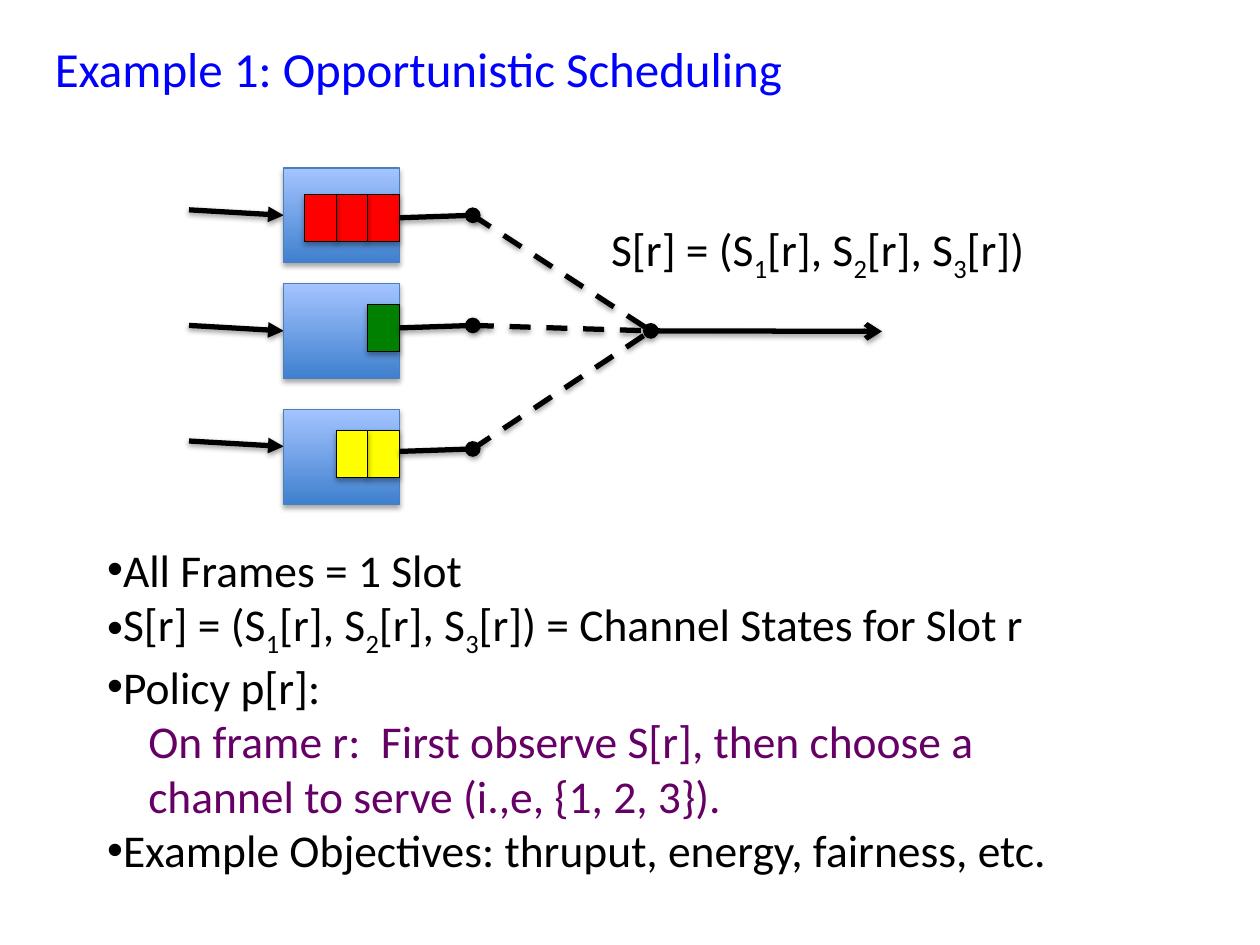
from dataclasses import dataclass

from lxml import etree
from pptx import Presentation
from pptx import util as u
from pptx.dml.color import RGBColor
from pptx.enum import dml, shapes, text
from pptx.oxml import ns

BLACK = RGBColor(0x00, 0x00, 0x00)
BLUE = RGBColor(0x00, 0x00, 0xFF)
PURPLE = RGBColor(0x66, 0x00, 0x66)
RED = RGBColor(0xFF, 0x00, 0x00)
GREEN = RGBColor(0x00, 0x80, 0x00)
YELLOW = RGBColor(0xFF, 0xFF, 0x00)
QUEUE_BOTTOM = RGBColor(0x3F, 0x80, 0xCE)
QUEUE_TOP = RGBColor(0xA4, 0xC4, 0xFF)
QUEUE_LINE = RGBColor(0x4B, 0x7E, 0xBC)

# Lengths in centimetres
ARRIVAL_X, QUEUE_X, SWITCH_X = 3.81, 5.72, 9.53
QUEUE_WIDTH, QUEUE_HEIGHT = 2.33, 1.91
QUEUE_RIGHT = QUEUE_X + QUEUE_WIDTH
PACKET_WIDTH, PACKET_HEIGHT = 0.635, 0.95
HUB = (13.12, 6.67)
SERVER_END = (17.78, 6.68)


@dataclass
class Queue:
    top: float
    arrival_y: float
    packet_top: float
    switch_y: float
    packets: int
    color: RGBColor


QUEUES = [
    Queue(3.39, 4.23, 3.92, 4.34, 3, RED),
    Queue(5.72, 6.56, 6.14, 6.56, 1, GREEN),
    Queue(8.26, 8.89, 8.68, 9.05, 2, YELLOW),
]


@dataclass
class Line:
    content: str
    bullet: bool = True
    color: RGBColor = BLACK


STATES = "S[r] = (S_1[r], S_2[r], S_3[r])"
LINES = [
    Line("All Frames = 1 Slot"),
    Line(STATES + " = Channel States for Slot r"),
    Line("Policy p[r]:"),
    Line("On frame r:  First observe S[r], then choose a", False, PURPLE),
    Line("channel to serve (i.,e, {1, 2, 3}).", False, PURPLE),
    Line("Example Objectives: thruput, energy, fairness, etc."),
]


def add_child(parent, tag: str, **attributes):
    return etree.SubElement(parent, ns.qn(tag), attributes)


def add_shadow(shape, distance: float, opacity: int) -> None:
    """Append a soft shadow below; call after fill and line are set."""
    effects = add_child(shape._element.spPr, "a:effectLst")
    shadow = add_child(effects, "a:outerShdw", blurRad=str(u.Pt(3.1)),
                       dist=str(u.Pt(distance)), dir="5400000", rotWithShape="0")
    color = add_child(shadow, "a:srgbClr", val=str(BLACK))
    add_child(color, "a:alpha", val=str(opacity * 1000))


def add_box(slide, left: float, top: float, width: float, height: float,
            line_color: RGBColor, fill_color: RGBColor | None = None) -> None:
    """Draw a rectangle; without a fill colour it gets the queue gradient."""
    shape = slide.shapes.add_shape(shapes.MSO_SHAPE.RECTANGLE, u.Cm(left),
                                   u.Cm(top), u.Cm(width), u.Cm(height))
    if fill_color is None:
        shape.fill.gradient()
        shape.fill.gradient_angle = 90
        for stop, color, position in zip(shape.fill.gradient_stops,
                                         (QUEUE_BOTTOM, QUEUE_TOP), (0, 1)):
            stop.color.rgb = color
            stop.position = position
    else:
        shape.fill.solid()
        shape.fill.fore_color.rgb = fill_color
    shape.line.color.rgb = line_color
    shape.line.width = u.Pt(0.75)
    add_shadow(shape, 1.8, 35)


def add_line(slide, start: tuple[float, float], end: tuple[float, float],
             head: str = "", tail: str = "", dashed: bool = False) -> None:
    connector = slide.shapes.add_connector(
        shapes.MSO_CONNECTOR.STRAIGHT, *(u.Cm(value) for value in start + end))
    connector.line.color.rgb = BLACK
    connector.line.width = u.Pt(3)
    if dashed:
        connector.line.dash_style = dml.MSO_LINE.DASH
    outline = connector.line._get_or_add_ln()
    if head:
        add_child(outline, "a:headEnd", type=head)
    if tail:
        add_child(outline, "a:tailEnd", type=tail)
    add_shadow(connector, 1.6, 38)


def write(paragraph, content: str, *, size: float = 26, color: RGBColor = BLACK,
          bullet: bool = False, indent: float = 0) -> None:
    """Fill a paragraph; the character after each underscore is a subscript."""
    paragraph.alignment = text.PP_ALIGN.LEFT
    properties = paragraph._p.get_or_add_pPr()
    properties.set("marL", str(u.Cm(indent)))
    properties.set("indent", "0")
    if bullet:
        add_child(properties, "a:buFont", typeface="Arial")
        add_child(properties, "a:buChar", char="•")
    first, *rest = content.split("_")
    pieces = [(first, False)]
    for part in rest:
        pieces += [(part[:1], True), (part[1:], False)]
    for piece, subscript in pieces:
        run = paragraph.add_run()
        run.text = piece
        run.font.name = "Calibri"
        run.font.size = u.Pt(size)
        run.font.color.rgb = color
        if subscript:
            run.font._element.set("baseline", "-25000")


def add_text_box(slide, left: float, top: float, width: float, height: float,
                 wrap: bool = True):
    box = slide.shapes.add_textbox(u.Cm(left), u.Cm(top), u.Cm(width), u.Cm(height))
    box.text_frame.word_wrap = wrap
    return box.text_frame


def add_queue(slide, queue: Queue) -> None:
    add_line(slide, (ARRIVAL_X, queue.arrival_y),
             (QUEUE_X, queue.arrival_y + 0.11), tail="triangle")
    add_box(slide, QUEUE_X, queue.top, QUEUE_WIDTH, QUEUE_HEIGHT, QUEUE_LINE)
    for number in range(1, queue.packets + 1):
        add_box(slide, QUEUE_RIGHT - number * PACKET_WIDTH, queue.packet_top,
                PACKET_WIDTH, PACKET_HEIGHT, BLACK, queue.color)
    switch = (SWITCH_X, queue.switch_y)
    add_line(slide, (QUEUE_RIGHT, queue.switch_y + 0.05), switch, tail="oval")
    add_line(slide, switch, HUB, dashed=True)


def main() -> None:
    presentation = Presentation()
    presentation.slide_width, presentation.slide_height = u.Cm(25.4), u.Cm(19.05)
    slide = presentation.slides.add_slide(presentation.slide_layouts[5])

    # Title
    title = slide.shapes.title
    title.left, title.top = u.Cm(0.85), u.Cm(0.64)
    title.width, title.height = u.Cm(23.07), u.Cm(1.45)
    title.text_frame.vertical_anchor = text.MSO_ANCHOR.TOP
    title.text_frame.auto_size = text.MSO_AUTO_SIZE.NONE
    write(title.text_frame.paragraphs[0], "Example 1: Opportunistic Scheduling",
          size=28, color=BLUE)

    # Queues, channels and server
    for queue in QUEUES:
        add_queue(slide, queue)
    add_line(slide, HUB, SERVER_END, head="oval", tail="arrow")

    # Channel state label
    label = add_text_box(slide, 12.07, 4.34, 9.04, 1.37, wrap=False)
    write(label.paragraphs[0], STATES)

    # Explanation
    frame = add_text_box(slide, 1.91, 10.8, 21.59, 6.93)
    for index, line in enumerate(LINES):
        paragraph = frame.add_paragraph() if index else frame.paragraphs[0]
        write(paragraph, line.content, color=line.color, bullet=line.bullet,
              indent=0 if line.bullet else 0.83)

    presentation.save("out.pptx")


if __name__ == "__main__":
    main()
